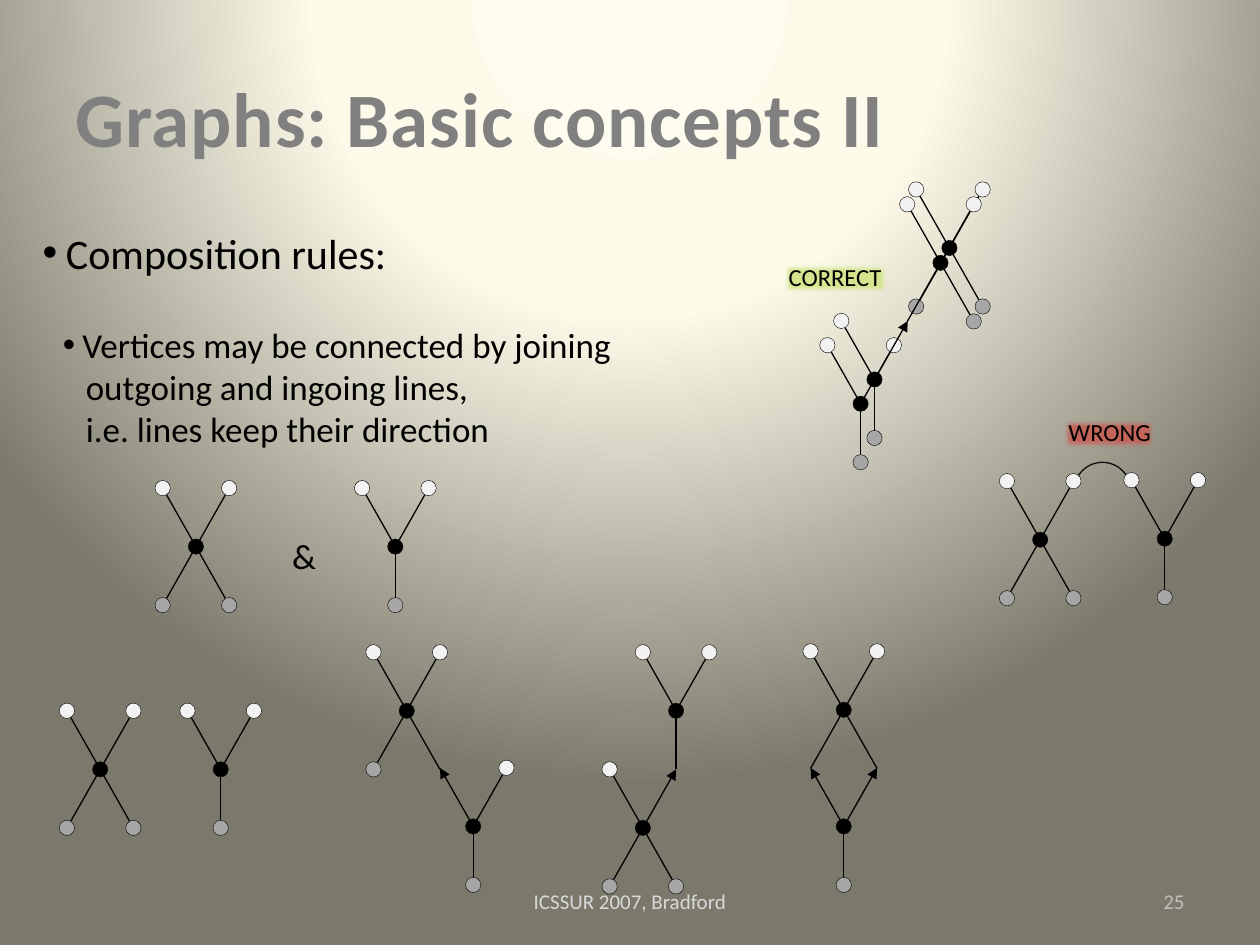
from lxml.etree import SubElement
from pptx import Presentation
from pptx.dml.color import RGBColor
from pptx.enum.shapes import MSO_CONNECTOR, MSO_SHAPE
from pptx.enum.text import MSO_ANCHOR, PP_ALIGN
from pptx.oxml import parse_xml
from pptx.oxml.ns import nsdecls, qn
from pptx.util import Cm, Pt

COLORS = {
    "black": "000000", "title": "808080", "edge": "0D0D0D",
    "outgoing": "F2F2F2", "ingoing": "A6A6A6", "vertex": "000000",
    "footer": "D9D9D9", "number": "BFBFBF",
    "correct": "D5E58E", "wrong": "C4665C",
    "light": "FEFCEE", "cream": "FDFAEA", "dark": "7B796B",
}
DOT = 0.31
ARMS = {"nw": (-0.67, -1.18), "ne": (0.67, -1.18),
        "sw": (-0.67, 1.18), "se": (0.67, 1.18), "s": (0, 1.18)}
X = ("nw", "ne", "sw", "se")
Y = ("nw", "ne", "s")


def rgb(name):
    return RGBColor.from_string(COLORS[name])


def write(frame, text, size=20, color="black", bold=False, align=PP_ALIGN.LEFT,
          indents=(), bullet=False, spacing=0):
    frame.word_wrap = True
    frame.vertical_anchor = MSO_ANCHOR.MIDDLE
    for index, line in enumerate(text.split("\n")):
        paragraph = frame.paragraphs[0] if index == 0 else frame.add_paragraph()
        paragraph.alignment = align
        run = paragraph.add_run()
        run.text = line
        run.font.name = "Calibri"
        run.font.size = Pt(size)
        run.font.bold = bold
        run.font.color.rgb = rgb(color)
        if spacing:
            run.font._element.set("spc", str(spacing))
        if indents:
            properties = paragraph._p.get_or_add_pPr()
            properties.set("marL", str(Cm(indents[index])))
            if bullet and index == 0:
                properties.set("indent", str(-Cm(indents[0])))
                SubElement(properties, qn("a:buFont"), typeface="Arial")
                SubElement(properties, qn("a:buChar"), char="•")


class GraphSlide:
    def __init__(self, slide):
        self.slide = slide

    def background(self):
        self.slide.background.fill.gradient()
        stops = "".join(
            f'<a:gs pos="{position}"><a:srgbClr val="{COLORS[name]}"/></a:gs>'
            for position, name in ((0, "light"), (40000, "cream"), (100000, "dark")))
        gradient = parse_xml(
            f'<a:gradFill {nsdecls("a")} rotWithShape="1"><a:gsLst>{stops}</a:gsLst>'
            '<a:path path="circle">'
            '<a:fillToRect l="50000" t="-80000" r="50000" b="180000"/>'
            '</a:path></a:gradFill>')
        default = next(self.slide.element.iter(qn("a:gradFill")))
        default.getparent().replace(default, gradient)

    def text(self, text, left, top, width, height, **style):
        box = self.slide.shapes.add_textbox(Cm(left), Cm(top), Cm(width), Cm(height))
        write(box.text_frame, text, **style)

    def line(self, start, end, arrow=False):
        link = self.slide.shapes.add_connector(
            MSO_CONNECTOR.STRAIGHT, *(Cm(value) for value in (*start, *end)))
        link.line.color.rgb = rgb("black")
        link.line.width = Pt(0.75)
        if arrow:
            SubElement(link.line._get_or_add_ln(), qn("a:tailEnd"), type="triangle")
        SubElement(link._element.spPr, qn("a:effectLst"))

    def shape(self, kind, left, top, width, height):
        shape = self.slide.shapes.add_shape(
            kind, Cm(left), Cm(top), Cm(width), Cm(height))
        shape.shadow.inherit = False
        return shape

    def dot(self, center, role):
        dot = self.shape(MSO_SHAPE.OVAL, center[0] - DOT / 2, center[1] - DOT / 2,
                         DOT, DOT)
        dot.fill.solid()
        dot.fill.fore_color.rgb = rgb(role)
        dot.line.color.rgb = rgb("edge")
        dot.line.width = Pt(0.25)

    def arc(self, left, top, width, height, start, end):
        arc = self.shape(MSO_SHAPE.ARC, left, top, width, height)
        arc.adjustments[0], arc.adjustments[1] = start, end
        arc.fill.background()
        arc.line.color.rgb = rgb("edge")
        arc.line.width = Pt(0.75)

    def halo(self, color, left, top, width, height):
        halo = self.shape(MSO_SHAPE.RECTANGLE, left, top, width, height)
        halo.fill.solid()
        halo.fill.fore_color.rgb = rgb(color)
        halo.line.fill.background()
        effects = halo._element.spPr.find(qn("a:effectLst"))
        SubElement(effects, qn("a:softEdge"), rad=str(Pt(3)))

    def graph(self, x, y, arms, bare=(), arrows=()):
        ends = {arm: (x + ARMS[arm][0], y + ARMS[arm][1]) for arm in arms}
        for arm, end in ends.items():
            self.line((x, y), end, arm in arrows)
        for arm, end in ends.items():
            if arm not in bare and arm not in arrows:
                self.dot(end, "outgoing" if arm.startswith("n") else "ingoing")
        self.dot((x, y), "vertex")


def main():
    deck = Presentation()
    deck.slide_width, deck.slide_height = Cm(25.4), Cm(19.05)
    page = GraphSlide(deck.slides.add_slide(deck.slide_layouts[6]))
    page.background()

    page.text("Graphs: Basic concepts II", 1.27, 0.76, 22.86, 3.18,
              size=44, color="title", bold=True, spacing=50)
    page.text("ICSSUR 2007, Bradford", 8.68, 17.66, 8.04, 1.01,
              size=12, color="footer", align=PP_ALIGN.CENTER)
    page.text("25", 18.2, 17.66, 5.93, 1.01,
              size=12, color="number", align=PP_ALIGN.RIGHT)
    page.text("Composition rules:", 0.61, 4.22, 11.99, 1.73,
              size=24, indents=(0.47,), bullet=True)
    page.text("Vertices may be connected by joining\n"
              "outgoing and ingoing lines,\n"
              "i.e. lines keep their direction", 1.02, 6.02, 12.45, 3.53,
              indents=(0.39, 0.46, 0.46), bullet=True)
    page.text("&", 5.64, 10.52, 1.17, 1.35)

    page.arc(21.64, 9.32, 1.17, 1.22, 126.415, 195.17)
    for x, y, arms, bare, arrows in (
        (3.95, 11.02, X, (), ()),
        (7.97, 11.02, Y, (), ()),
        (20.97, 10.88, X, (), ()),
        (23.48, 10.86, Y, (), ()),
        (19.14, 5.0, X, (), ()),
        (17.35, 8.14, Y, (), ()),
        (18.96, 5.3, X, ("sw",), ()),
        (17.63, 7.65, Y, (), ("ne",)),
        (2.02, 15.51, X, (), ()),
        (4.45, 15.51, Y, (), ()),
        (8.2, 14.33, X, ("se",), ()),
        (9.54, 16.66, Y, (), ("nw",)),
        (12.96, 16.69, X, (), ("ne",)),
        (13.63, 14.33, Y, ("s",), ()),
        (17.01, 14.31, X, ("sw", "se"), ()),
        (17.01, 16.66, Y, (), ("nw", "ne")),
    ):
        page.graph(x, y, arms, bare, arrows)

    page.halo("correct", 15.75, 5.27, 2.18, 0.68)
    page.text("CORRECT", 15.65, 4.95, 2.39, 1.24, size=14)
    page.halo("wrong", 21.4, 8.42, 1.92, 0.66)
    page.text("WRONG", 21.29, 8.08, 2.67, 1.24, size=14)

    deck.save("out.pptx")


if __name__ == "__main__":
    main()
